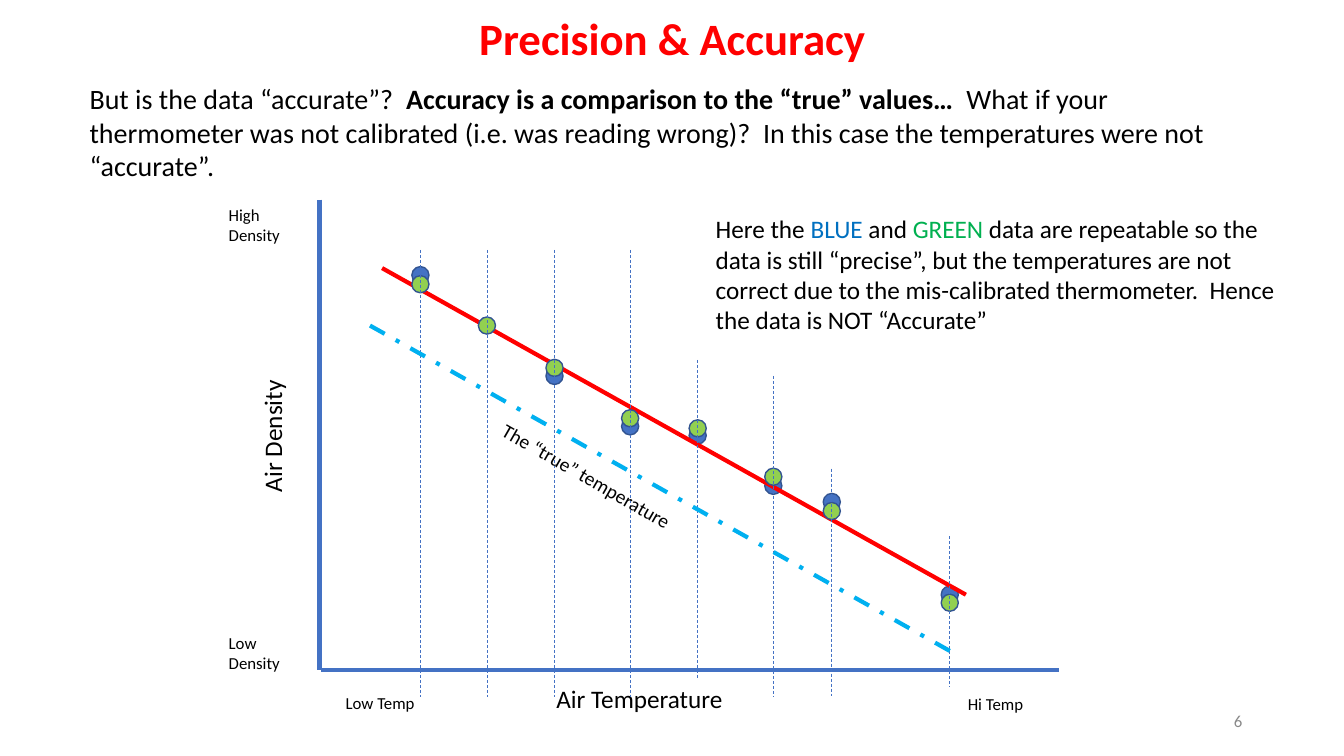
"""Build the slide on precision and accuracy of air density data."""
from pptx import Presentation
from pptx import util as u
from pptx.dml.color import RGBColor
from pptx.enum import dml, shapes, text
from pptx.oxml import parse_xml
from pptx.oxml.ns import nsdecls

BLACK, RED, BLUE, GREEN = "000000", "FF0000", "4472C4", "92D050"
hue = RGBColor.from_string
dash = dml.MSO_LINE

deck = Presentation()
deck.slide_width, deck.slide_height = u.Inches(13.33), u.Inches(7.5)
slide = deck.slides.add_slide(deck.slide_layouts[5])


def write(at, size, parts, turn=0, box=None):
    """Place text made of (words, colour, bold) parts."""
    spot = [u.Inches(v) for v in at]
    box = box or slide.shapes.add_textbox(*spot)
    box.left, box.top, box.width, box.height = spot
    box.rotation = turn
    frame = box.text_frame
    frame.word_wrap = True
    for words, tint, bold in parts:
        run = frame.paragraphs[0].add_run()
        run.text = words
        run.font.name, run.font.size, run.font.bold = "Calibri", u.Pt(size), bold
        run.font.color.rgb = hue(tint)
    return frame


def draw(start, end, tint, width, style=None):
    """Draw a straight line between two points."""
    ends = [u.Inches(v) for v in (*start, *end)]
    line = slide.shapes.add_connector(shapes.MSO_CONNECTOR.STRAIGHT, *ends)
    line.line.color.rgb, line.line.width = hue(tint), u.Pt(width)
    if style:
        line.line.dash_style = style
    line._element.spPr.append(parse_xml(f"<a:effectLst {nsdecls('a')}/>"))


title = write((2.17, 0.1, 9, 0.62), 32, [("Precision & Accuracy", RED, True)],
              box=slide.shapes.title)
title.vertical_anchor = text.MSO_ANCHOR.MIDDLE
title.paragraphs[0].alignment = text.PP_ALIGN.CENTER
title.paragraphs[0].line_spacing = 0.9

write((0.79, 0.76, 11.74, 1.11), 20, [
    ("But is the data “accurate”?  ", BLACK, False),
    ("Accuracy is a comparison to the “true” values…  ", BLACK, True),
    ("What if your thermometer was not calibrated (i.e. was reading wrong)?  "
     "In this case the temperatures were not “accurate”.", BLACK, False)])

draw((3.17, 1.98), (3.17, 6.65), BLUE, 3)
draw((10.5, 6.65), (3.18, 6.65), BLUE, 3)

labels = [
    ("Air Density", 18, (1.95, 4.03, 1.5, 0.4), 270),
    ("Air Temperature", 18, (5.42, 6.73, 2.75, 0.4), 0),
    ("High Density", 12, (2.17, 1.98, 0.92, 0.51), 0),
    ("Low Density", 12, (2.17, 6.23, 0.92, 0.51), 0),
    ("Low Temp", 12, (3.33, 6.82, 0.92, 0.3), 0),
    ("Hi Temp", 12, (9.5, 6.83, 0.92, 0.3), 0),
]
for words, size, at, turn in labels:
    write(at, size, [(words, BLACK, False)], turn)

temps = [4.17, 4.83, 5.5, 6.25, 6.92, 7.67, 8.25, 9.42]
first = [2.73, None, 3.73, 4.23, 4.32, 4.82, 4.98, 5.9]
again = [2.82, 3.23, 3.65, 4.15, 4.25, 4.73, 5.07, 5.98]
tops = [2.48, 2.48, 2.48, 2.48, 3.57, 3.73, 4.65, 5.32]
feet = [6.91, 6.91, 6.91, 6.91, 6.74, 6.91, 6.9, 6.82]
size = 0.17

for tint, levels in ((BLUE, first), (GREEN, again)):
    if tint == GREEN:
        draw((3.79, 2.66), (9.58, 5.9), RED, 3)
    for x, y in zip(temps, levels):
        if y is None:
            continue
        dot = slide.shapes.add_shape(
            shapes.MSO_SHAPE.OVAL, u.Inches(x - size / 2), u.Inches(y - size / 2),
            u.Inches(size), u.Inches(size))
        dot.shadow.inherit = False
        dot.fill.solid()
        dot.fill.fore_color.rgb = hue(tint)
        dot.line.color.rgb, dot.line.width = hue("325491"), u.Pt(1)

for x, top, foot in zip(temps, tops, feet):
    draw((x, top), (x, foot), BLUE, 0.5, dash.DASH)

draw((3.67, 3.23), (9.46, 6.48), "00B0F0", 3, dash.DASH_DOT)
write((4.73, 4.73, 2.79, 0.34), 14, [("The “true” temperature", BLACK, False)], 29.8)

write((7, 2.07, 5.79, 1.31), 18, [
    ("Here the ", BLACK, False),
    ("BLUE", "0070C0", False),
    (" and ", BLACK, False),
    ("GREEN", "00B050", False),
    (" data are repeatable so the data is still “precise”, but the temperatures "
     "are not correct due to the mis-calibrated thermometer.  "
     "Hence the data is NOT “Accurate”", BLACK, False)])

page = write((9.42, 6.95, 3, 0.4), 12, [("6", "898989", False)])
page.vertical_anchor = text.MSO_ANCHOR.MIDDLE
page.paragraphs[0].alignment = text.PP_ALIGN.RIGHT

deck.save("out.pptx")
